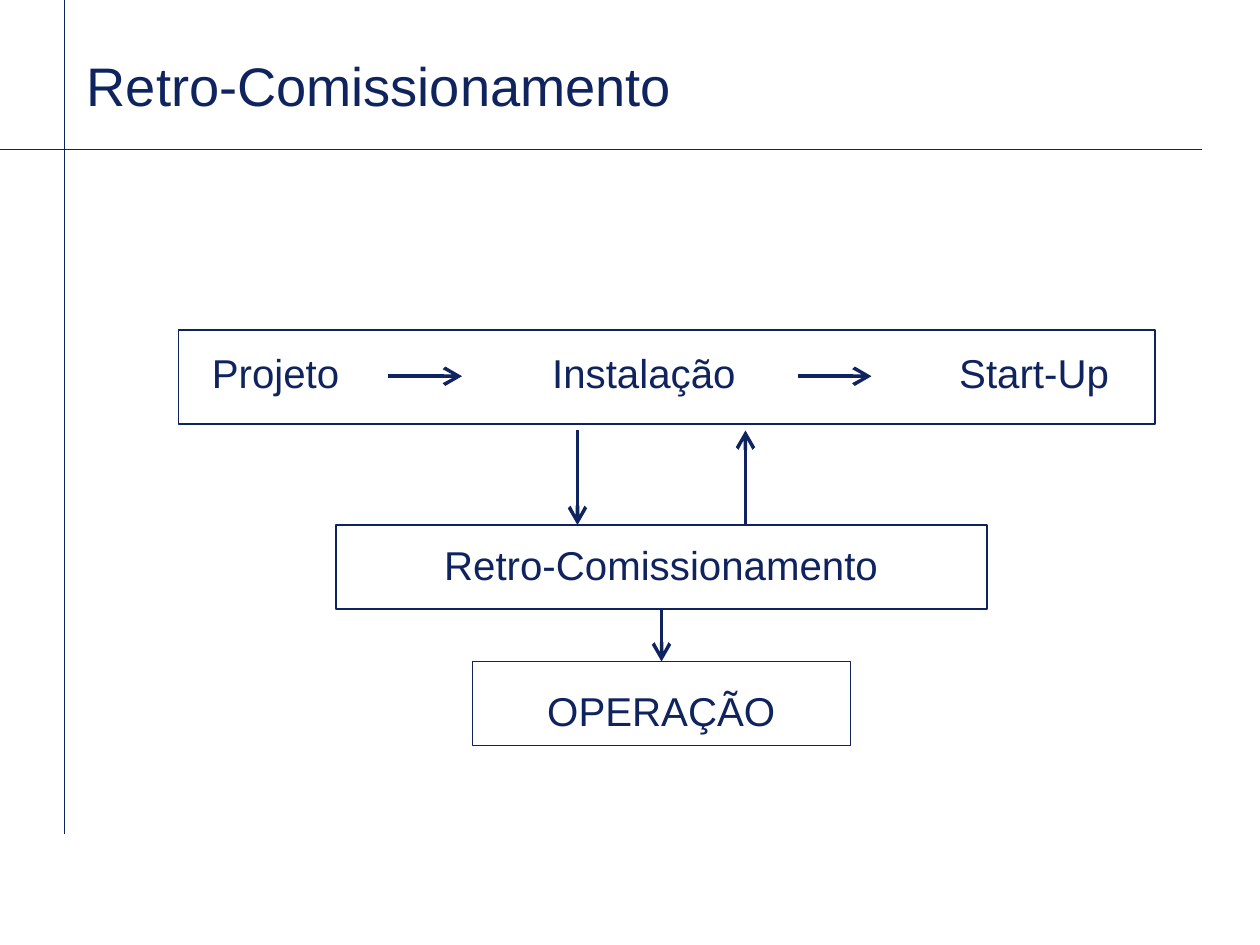
from dataclasses import dataclass

from lxml.etree import SubElement as Sub
from pptx import Presentation
from pptx.dml.color import RGBColor as Rgb
from pptx.enum.shapes import MSO_CONNECTOR as Conn, MSO_SHAPE as Kind
from pptx.enum.text import MSO_ANCHOR as Anchor, PP_ALIGN as Align
from pptx.oxml.ns import qn
from pptx.util import Pt


@dataclass(frozen=True)
class Theme:
    ink: Rgb = Rgb(0x0F, 0x24, 0x5F)
    font: str = "Arial"
    title: int = 31
    body: int = 23
    rule: float = 0.75
    edge: float = 1
    arrow: float = 2


THEME = Theme()


def write(shape, text, size=THEME.body, align=Align.CENTER, drop=0):
    frame = shape.text_frame
    frame.word_wrap = True
    frame.vertical_anchor = Anchor.MIDDLE
    frame.margin_top = Pt(3.6 + drop)
    para = frame.paragraphs[0]
    para.alignment = align
    run = para.add_run()
    run.text = text
    run.font.name = THEME.font
    run.font.size = Pt(size)
    run.font.color.rgb = THEME.ink


def label(slide, text, x, y, w, h, **style):
    box = slide.shapes.add_textbox(Pt(x), Pt(y), Pt(w), Pt(h))
    write(box, text, **style)


def frame(slide, x, y, w, h):
    box = slide.shapes.add_shape(Kind.RECTANGLE, Pt(x), Pt(y), Pt(w), Pt(h))
    box.shadow.inherit = False
    box.fill.background()
    box.line.color.rgb = THEME.ink
    box.line.width = Pt(THEME.edge)
    return box


def rule(slide, x1, y1, x2, y2, width=THEME.rule):
    line = slide.shapes.add_connector(
        Conn.STRAIGHT, Pt(x1), Pt(y1), Pt(x2), Pt(y2))
    line.line.color.rgb = THEME.ink
    line.line.width = Pt(width)
    Sub(line.element.spPr, qn("a:effectLst"))
    return line


def arrow(slide, x1, y1, x2, y2):
    line = rule(slide, x1, y1, x2, y2, THEME.arrow)
    edge = line.element.spPr.find(qn("a:ln"))
    Sub(edge, qn("a:tailEnd"), type="arrow", w="lg", len="lg")
    return line


def main():
    deck = Presentation()
    deck.slide_width, deck.slide_height = Pt(720), Pt(540)
    slide = deck.slides.add_slide(deck.slide_layouts[6])

    rule(slide, 37, 476.5, 37, 0)
    rule(slide, 0, 85.5, 687, 85.5)
    label(slide, "Retro-Comissionamento", 42.5, 3.5, 570, 90,
          size=THEME.title, align=Align.LEFT)

    frame(slide, 102, 188.5, 558, 54)
    steps = ("Projeto", 157.5), ("Instalação", 368), ("Start-Up", 591)
    for text, mid in steps:
        label(slide, text, mid - 66, 194.5, 132, 37)
    for x in (222, 456):
        arrow(slide, x, 215, x + 42, 215)

    retro = frame(slide, 192, 300, 372, 48)
    write(retro, "Retro-Comissionamento", drop=-2.5)
    goal = frame(slide, 270, 378, 216, 48)
    write(goal, "OPERAÇÃO", drop=8)

    arrow(slide, 330, 246, 330, 300)
    arrow(slide, 426, 300, 426, 246)
    link = arrow(slide, 378, 348, 378, 378)
    link.begin_connect(retro, 2)
    link.end_connect(goal, 0)

    deck.save("out.pptx")


if __name__ == "__main__":
    main()
